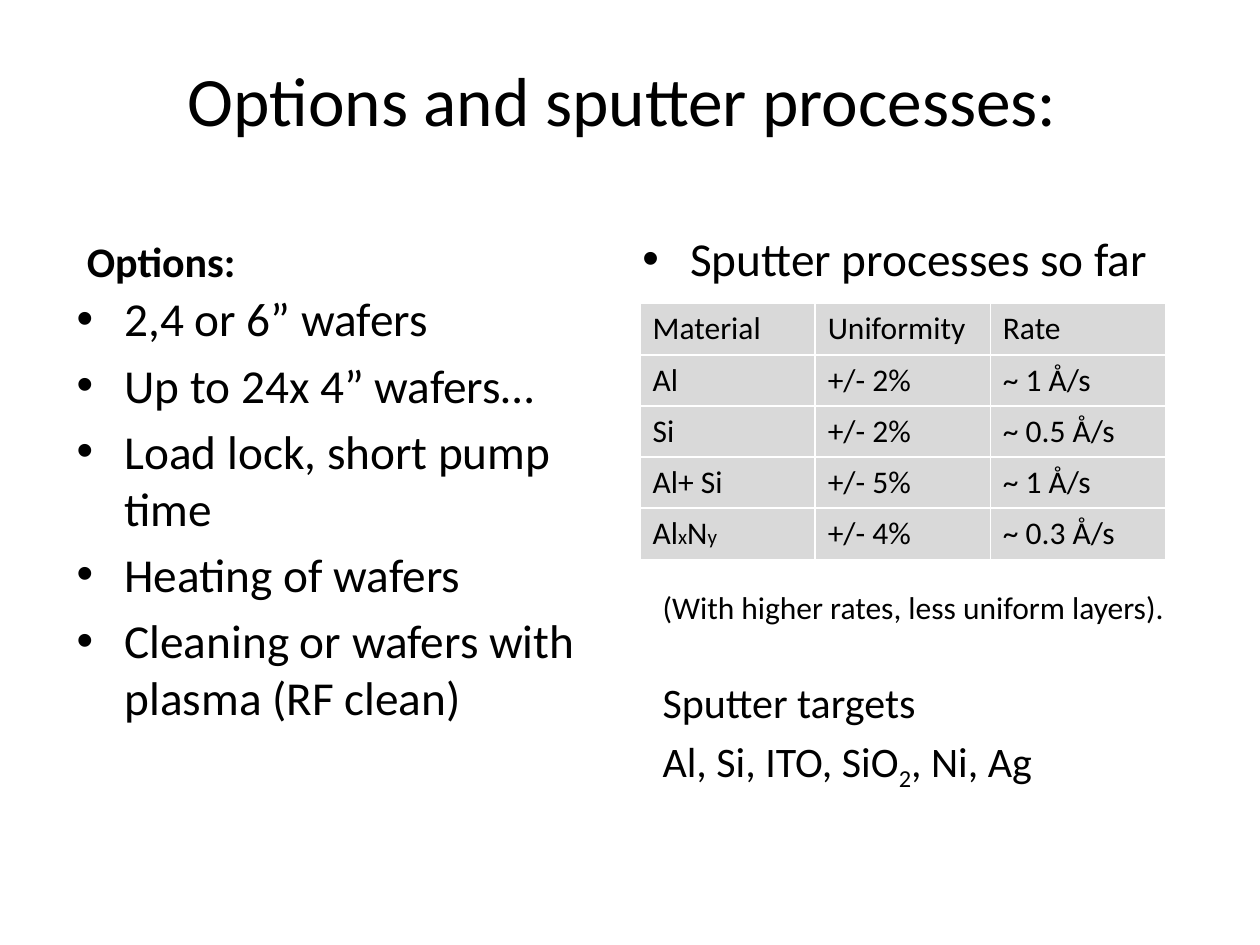
from dataclasses import dataclass

from lxml.etree import SubElement
from pptx import Presentation
from pptx.dml.color import RGBColor
from pptx.enum.text import MSO_ANCHOR as Anchor, PP_ALIGN as Align
from pptx.oxml.ns import qn
from pptx.slide import Slide
from pptx.table import _Cell as Cell
from pptx.text.text import _Paragraph as Paragraph
from pptx.util import Inches, Pt


@dataclass(frozen=True)
class Theme:
    font: str = "Calibri"
    ink: RGBColor = RGBColor(0, 0, 0)
    cell: RGBColor = RGBColor(0xD9, 0xD9, 0xD9)
    border: str = "FFFFFF"
    border_width: float = 1
    title: float = 39.6
    bullet: float = 27
    heading: float = 24
    small: float = 18
    index: float = 12
    spacing: float = 0.2
    indent: float = 0.38


@dataclass(frozen=True)
class Span:
    text: str
    size: float | None = None
    baseline: int = 0


@dataclass(frozen=True)
class TextBlock:
    left: float
    top: float
    height: float
    size: float
    lines: tuple[str | tuple[Span, ...], ...]
    bold: bool = False
    bulleted: bool = False
    anchor: Anchor = Anchor.TOP


THEME = Theme()
BLOCK_WIDTH = 4.42

BLOCKS = (
    TextBlock(0.59, 1.62, 0.7, THEME.heading, ("Options:",), bold=True, anchor=Anchor.BOTTOM),
    TextBlock(5, 1.62, 0.7, THEME.bullet, ("Sputter processes so far",), bulleted=True, anchor=Anchor.BOTTOM),
    TextBlock(
        0.51, 2.25, 4.32, THEME.bullet,
        (
            "2,4 or 6” wafers",
            "Up to 24x 4” wafers…",
            "Load lock, short pump time",
            "Heating of wafers",
            "Cleaning or wafers with plasma (RF clean)",
        ),
        bulleted=True,
    ),
    TextBlock(
        5.16, 5.32, 0.89, THEME.heading,
        ("Sputter targets", (Span("Al, Si, ITO, SiO"), Span("2", baseline=-25000), Span(", Ni, Ag"))),
    ),
    TextBlock(5.16, 4.62, 0.73, THEME.small, ("(With higher rates, less uniform layers).",)),
)

NITRIDE = (Span("Al"), Span("x", THEME.index), Span("N"), Span("y", THEME.index))
PROCESSES = (
    ("Material", "Uniformity", "Rate"),
    ("Al", "+/- 2%", "~ 1 Å/s"),
    ("Si", "+/- 2%", "~ 0.5 Å/s"),
    ("Al+ Si", "+/- 5%", "~ 1 Å/s"),
    (NITRIDE, "+/- 4%", "~ 0.3 Å/s"),
)


def write_line(paragraph: Paragraph, line: str | tuple[Span, ...], size: float, bold: bool = False) -> None:
    spans = (Span(line),) if isinstance(line, str) else line
    for span in spans:
        run = paragraph.add_run()
        run.text = span.text
        run.font.name = THEME.font
        run.font.size = Pt(span.size or size)
        run.font.bold = bold
        run.font.color.rgb = THEME.ink
        if span.baseline:
            run.font._element.set("baseline", str(span.baseline))


def add_bullet(paragraph: Paragraph) -> None:
    properties = paragraph._p.get_or_add_pPr()
    properties.set("marL", str(Inches(THEME.indent)))
    properties.set("indent", str(-Inches(THEME.indent)))
    SubElement(properties, qn("a:buFont"), typeface="Arial")
    SubElement(properties, qn("a:buChar"), char="•")


def add_block(slide: Slide, block: TextBlock) -> None:
    shape = slide.shapes.add_textbox(
        Inches(block.left), Inches(block.top), Inches(BLOCK_WIDTH), Inches(block.height)
    )
    text_frame = shape.text_frame
    text_frame.word_wrap = True
    text_frame.vertical_anchor = block.anchor
    for index, line in enumerate(block.lines):
        paragraph = text_frame.add_paragraph() if index else text_frame.paragraphs[0]
        if block.bulleted:
            add_bullet(paragraph)
        if index:
            paragraph.space_before = Pt(block.size * THEME.spacing)
        write_line(paragraph, line, block.size, block.bold)


def format_cell(cell: Cell) -> None:
    properties = cell._tc.get_or_add_tcPr()
    for side in ("lnL", "lnR", "lnT", "lnB"):
        border = SubElement(properties, qn(f"a:{side}"), w=str(Pt(THEME.border_width)))
        SubElement(SubElement(border, qn("a:solidFill")), qn("a:srgbClr"), val=THEME.border)
    cell.fill.solid()
    cell.fill.fore_color.rgb = THEME.cell


def add_process_table(slide: Slide) -> None:
    table = slide.shapes.add_table(
        len(PROCESSES), len(PROCESSES[0]), Inches(5.08), Inches(2.41), Inches(4.17), Inches(2.03)
    ).table
    table.first_row = False
    table.horz_banding = False
    for row_index, row in enumerate(PROCESSES):
        for column_index, line in enumerate(row):
            cell = table.cell(row_index, column_index)
            format_cell(cell)
            write_line(cell.text_frame.paragraphs[0], line, THEME.small)


def add_title(slide: Slide) -> None:
    title = slide.shapes.title
    title.left, title.top = Inches(0.44), Inches(0.32)
    title.width, title.height = Inches(9), Inches(0.93)
    title.text_frame.vertical_anchor = Anchor.MIDDLE
    paragraph = title.text_frame.paragraphs[0]
    paragraph.alignment = Align.CENTER
    write_line(paragraph, "Options and sputter processes:", THEME.title)


def main() -> None:
    presentation = Presentation()
    presentation.slide_width, presentation.slide_height = Inches(10), Inches(7.5)
    slide = presentation.slides.add_slide(presentation.slide_layouts[5])
    add_title(slide)
    for block in BLOCKS:
        add_block(slide, block)
    add_process_table(slide)
    presentation.save("out.pptx")


if __name__ == "__main__":
    main()
